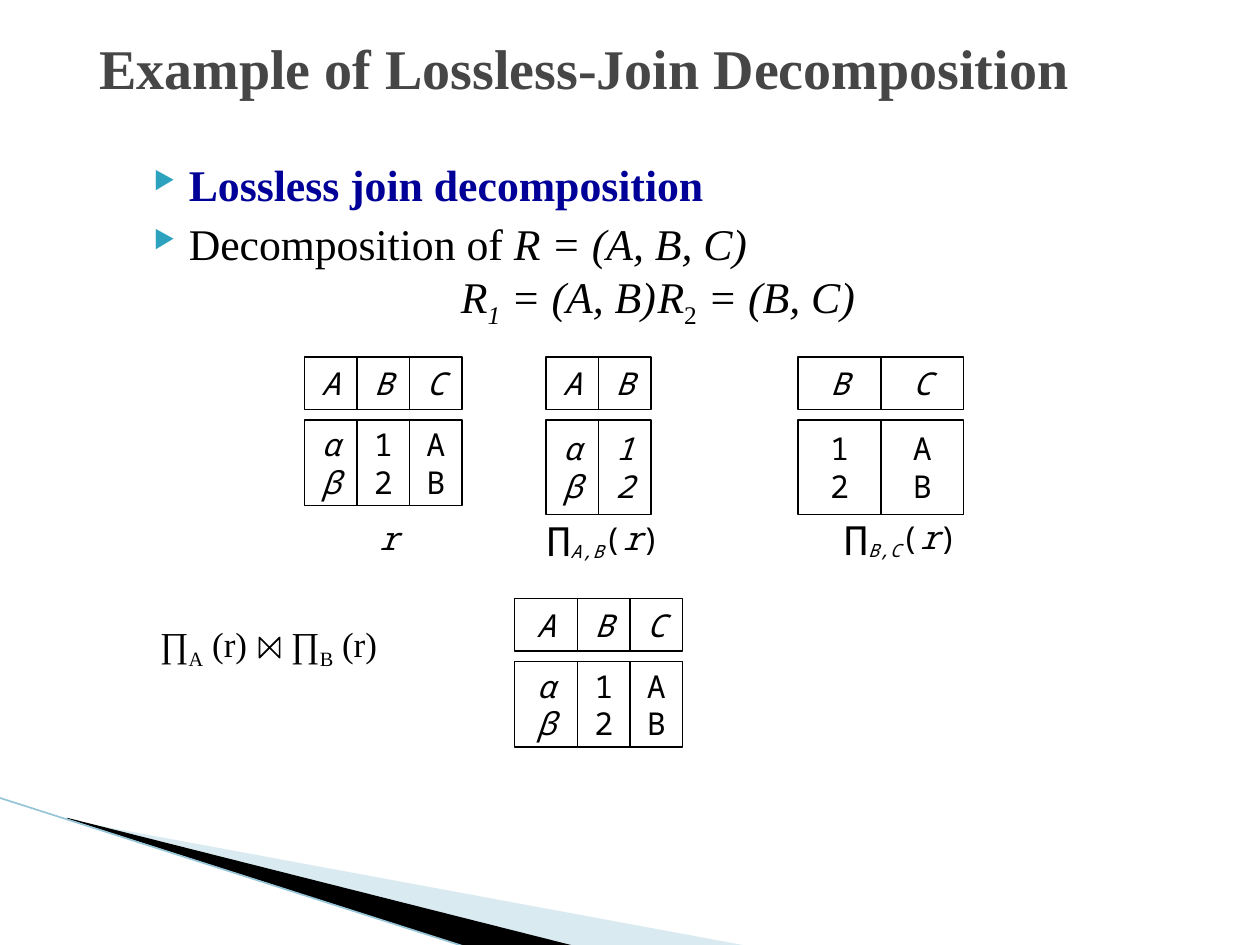
from dataclasses import dataclass

from lxml import etree
from pptx import Presentation
from pptx.dml.color import RGBColor
from pptx.enum.shapes import MSO_CONNECTOR, MSO_SHAPE
from pptx.enum.text import MSO_ANCHOR, PP_ALIGN
from pptx.oxml.ns import qn
from pptx.util import Inches, Pt

LINE = MSO_CONNECTOR.STRAIGHT
RECT = MSO_SHAPE.RECTANGLE
MIDDLE, TOP = MSO_ANCHOR.MIDDLE, MSO_ANCHOR.TOP
CENTER, LEFT = PP_ALIGN.CENTER, PP_ALIGN.LEFT


@dataclass(frozen=True)
class Theme:
    serif: str = "Times New Roman"
    mono: str = "Noto Sans Mono"
    ink: str = "000000"
    paper: str = "FFFFFF"
    title: str = "464646"
    term: str = "000099"
    bullet: str = "2DA2BF"
    pale: str = "A0CBDC"
    edge: str = "97C5D8"
    title_size: int = 32
    body_size: int = 25
    formula_size: int = 20
    cell_size: int = 18
    bullet_percent: int = 56


T = Theme()
UNIT = 1 / 12       # grid step in inches
HEAD_ROWS = 5       # height of a heading cell
BODY_OFFSET = 6     # from heading top to body top
BODY_TABS = (2.56, 4.12)
JOIN_TAB = 1.04     # second projection, clear of the join sign


def rgb(value):
    return RGBColor.from_string(value)


def child(parent, tag, **attrs):
    return etree.SubElement(parent, qn(tag), {k: str(v) for k, v in attrs.items()})


def set_font(p, name, size, color=T.ink, bold=None, italic=None):
    p.font.name, p.font.size = name, Pt(size)
    p.font.bold, p.font.italic = bold, italic
    p.font.color.rgb = rgb(color)


def add_runs(p, parts):
    """Each part is (text, style); style holds i for italic, s for subscript."""
    for text, style in parts:
        if text == "\v":
            p.add_line_break()
            continue
        r = p.add_run()
        r.text = text
        if "i" in style:
            r.font.italic = True
        if "s" in style:
            r.font._element.set("baseline", "-25000")


def add_bullet(p, left, hanging):
    pPr = p._p.get_or_add_pPr()
    pPr.set("marL", str(Inches(left)))
    pPr.set("indent", str(-Inches(hanging)))
    child(child(pPr, "a:buClr"), "a:srgbClr", val=T.bullet)
    child(pPr, "a:buSzPct", val=T.bullet_percent * 1000)
    child(pPr, "a:buChar", char="▶")


def add_tabs(p, *stops):
    tab_list = child(p._p.get_or_add_pPr(), "a:tabLst")
    for stop in stops:
        child(tab_list, "a:tab", pos=Inches(stop), algn="l")


def text_box(s, x, y, w, h, anchor=TOP, align=LEFT):
    tf = s.shapes.add_textbox(Inches(x), Inches(y), Inches(w), Inches(h)).text_frame
    tf.word_wrap, tf.vertical_anchor = True, anchor
    tf.paragraphs[0].alignment = align
    return tf


def polygon(s, points):
    points = [(Inches(x), Inches(y)) for x, y in points]
    builder = s.shapes.build_freeform(*points[0])
    builder.add_line_segments(points[1:])
    sp = builder.convert_to_shape()
    sp.shadow.inherit = False
    return sp


def wedge(s, points, color, alpha=None):
    sp = polygon(s, points)
    sp.fill.solid()
    sp.fill.fore_color.rgb = rgb(color)
    sp.line.fill.background()
    if alpha:
        fill = sp._element.spPr.find(qn("a:solidFill"))
        child(fill[0], "a:alpha", val=alpha * 1000)


def cell(s, col, row, cols, rows, values, italic):
    sp = s.shapes.add_shape(RECT, *(Inches(n * UNIT) for n in (col, row, cols, rows)))
    sp.shadow.inherit = False
    sp.fill.solid()
    sp.fill.fore_color.rgb = rgb(T.paper)
    sp.line.color.rgb = rgb(T.ink)
    sp.line.width = Pt(0.75)
    tf = sp.text_frame
    tf.word_wrap, tf.vertical_anchor = False, MIDDLE
    for i, value in enumerate(values):
        p = tf.add_paragraph() if i else tf.paragraphs[0]
        p.alignment = CENTER
        p.add_run().text = value
        set_font(p, T.mono, T.cell_size, italic=italic)


def relation(s, col, row, rows, columns, slanted="αβ"):
    """columns: (heading, values, width in grid steps)."""
    for heading, values, width in columns:
        cell(s, col, row, width, HEAD_ROWS, heading, True)
        cell(s, col, row + BODY_OFFSET, width, rows, values, values[0] in slanted)
        col += width


def label(s, x, y, w, parts):
    p = text_box(s, x, y, w, 0.4, MIDDLE, CENTER).paragraphs[0]
    add_runs(p, parts)
    set_font(p, T.mono, T.cell_size)


def projection(attributes):
    return [("∏", ""), (attributes, "is"), ("(", ""), ("r", "i"), (")", "")]


def corner(s):
    wedge(s, [(0.55, 6.51), (5.95, 7.51), (4.56, 7.51), (0.55, 6.5)], T.pale, 40)
    wedge(s, [(0.53, 6.49), (4.57, 7.51), (3.72, 7.52), (0.54, 6.5)], T.ink)
    ends = (Inches(n) for n in (-0.01, 6.33, 3.71, 7.52))
    line = s.shapes.add_connector(LINE, *ends)
    line.line.color.rgb = rgb(T.edge)
    line.line.width = Pt(0.95)
    child(line._element.spPr, "a:effectLst")


def heading_and_bullets(s):
    p = text_box(s, 0.69, 0.28, 9.33, 0.5, MIDDLE).paragraphs[0]
    p.add_run().text = "Example of Lossless-Join Decomposition"
    set_font(p, T.serif, T.title_size, T.title, bold=True)

    tf = text_box(s, 1, 1.2, 7.65, 1.32)
    term, detail = tf.paragraphs[0], tf.add_paragraph()
    for p in (term, detail):
        add_bullet(p, 0.4, 0.28)
        add_tabs(p, *BODY_TABS)
    add_runs(term, [("Lossless join decomposition", "")])
    set_font(term, T.serif, T.body_size, T.term, bold=True)
    add_runs(detail, [("Decomposition of ", ""), ("R = (A, B, C)", "i"), ("\v", ""),
                      ("\tR", "i"), ("1", "is"), (" = (A, B)\tR", "i"),
                      ("2", "s"), (" = (B, C)", "i")])
    set_font(detail, T.serif, T.body_size)
    detail.space_before = Pt(4)


def join_formula(s):
    p = text_box(s, 1.17, 4.89, 2.75, 0.95).paragraphs[0]
    add_tabs(p, JOIN_TAB)
    add_runs(p, [("∏", ""), ("A", "s"), (" (r)\t∏", ""), ("B", "s"), (" (r)", "")])
    set_font(p, T.serif, T.formula_size)
    # Join sign
    x, y, d = 2.06, 5.06, 0.16
    sp = polygon(s, [(x, y), (x, y + d), (x + d, y), (x + d, y + d)])
    sp.fill.background()
    sp.line.color.rgb = rgb(T.ink)
    sp.line.width = Pt(1)


def main():
    prs = Presentation()
    prs.slide_width, prs.slide_height = Inches(10), Inches(7.5)
    s = prs.slides.add_slide(prs.slide_layouts[6])
    corner(s)
    heading_and_bullets(s)

    # Relation r, its two projections and their join
    a, b, c = ("A", "αβ", 5), ("B", "12", 5), ("C", "AB", 5)
    relation(s, 29, 34, 8.15, [a, b, c])
    relation(s, 52, 34, 9, [a, b], slanted="αβ12")
    relation(s, 76, 34, 9, [("B", "12", 7.9), ("C", "AB", 7.9)])
    relation(s, 49, 57, 8.15, [("A", "αβ", 6), b, c])

    # Captions
    label(s, 2.91, 4.07, 0.28, [("r", "i")])
    label(s, 4.08, 4.09, 1.42, projection("A,B"))
    label(s, 6.58, 4.08, 1.14, projection("B,C"))
    join_formula(s)
    prs.save("out.pptx")


if __name__ == "__main__":
    main()
